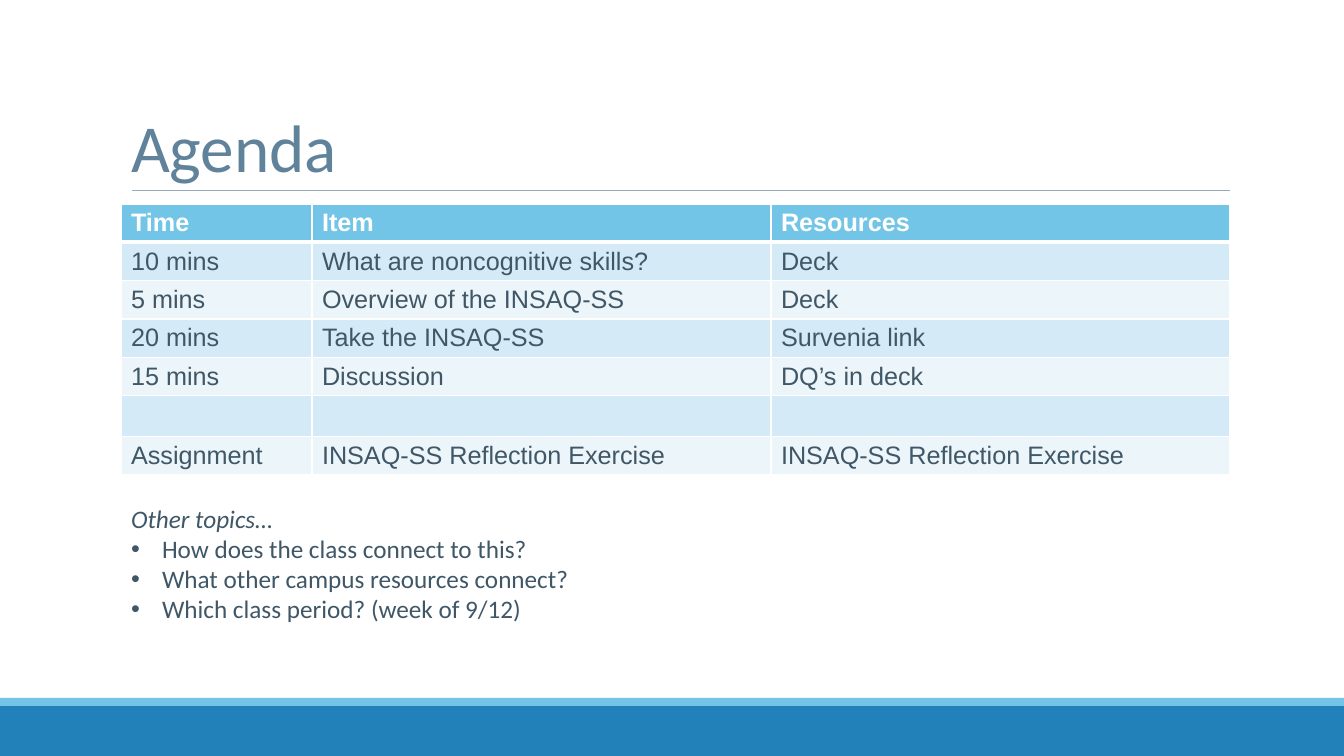
from lxml.etree import SubElement
from pptx import Presentation
from pptx.dml.color import RGBColor
from pptx.enum.shapes import MSO_CONNECTOR, MSO_SHAPE
from pptx.enum.text import MSO_ANCHOR, MSO_AUTO_SIZE, PP_ALIGN
from pptx.oxml.ns import qn
from pptx.util import Emu, Pt

EMU_PER_PX = 914400 / 100.8
SLIDE_W, SLIDE_H = 1344, 756
LEFT, CONTENT_W = 121, 1109

WHITE = RGBColor(0xFF, 0xFF, 0xFF)
BLUE = RGBColor(0x22, 0x81, 0xB8)
SKY = RGBColor(0x72, 0xC5, 0xE7)
RULE_GREY = RGBColor(0x95, 0xAC, 0xBC)
TITLE_BLUE = RGBColor(0x60, 0x83, 0x9B)
INK = RGBColor(0x40, 0x57, 0x67)
BAND_DARK = RGBColor(0xD4, 0xEA, 0xF6)
BAND_LIGHT = RGBColor(0xEB, 0xF5, 0xFA)

COLUMN_WIDTHS = (191, 459, 459)
ROW_H = 38
AGENDA = [
    ("Time", "Item", "Resources"),
    ("10 mins", "What are noncognitive skills?", "Deck"),
    ("5 mins", "Overview of the INSAQ-SS", "Deck"),
    ("20 mins", "Take the INSAQ-SS", "Survenia link"),
    ("15 mins", "Discussion", "DQ’s in deck"),
    ("", "", ""),
    ("Assignment", "INSAQ-SS Reflection Exercise", "INSAQ-SS Reflection Exercise"),
]
TOPICS = [
    "How does the class connect to this?",
    "What other campus resources connect?",
    "Which class period? (week of 9/12)",
]


def px(length):
    return Emu(round(length * EMU_PER_PX))


def place(shape, left, top, width, height):
    shape.left, shape.top = px(left), px(top)
    shape.width, shape.height = px(width), px(height)


def add_run(paragraph, text, size, font_name, color, bold=False, italic=False):
    run = paragraph.add_run()
    run.text = text
    font = run.font
    font.size, font.name = Pt(size), font_name
    font.bold, font.italic = bold, italic
    font.color.rgb = color


def add_band(slide, top, height, color):
    band = slide.shapes.add_shape(
        MSO_SHAPE.RECTANGLE, 0, px(top), px(SLIDE_W), px(height))
    band.shadow.inherit = False
    band.fill.solid()
    band.fill.fore_color.rgb = color
    band.line.fill.background()


def add_title_rule(slide):
    rule = slide.shapes.add_connector(
        MSO_CONNECTOR.STRAIGHT, px(132), px(191), px(1230), px(191))
    rule.line.color.rgb = RULE_GREY
    rule.line.width = Pt(0.75)
    SubElement(rule.element.spPr, qn("a:effectLst"))


def fill_title(title):
    place(title, LEFT, 31, CONTENT_W, 160)
    frame = title.text_frame
    frame.auto_size = MSO_AUTO_SIZE.NONE
    frame.vertical_anchor = MSO_ANCHOR.BOTTOM
    heading = frame.paragraphs[0]
    heading.alignment = PP_ALIGN.LEFT
    heading.line_spacing = 0.85
    add_run(heading, "Agenda", 48, "Calibri", TITLE_BLUE)


def set_borders(cell, **widths):
    """Draw white borders; the widths in points are keyed L, R, T and B."""
    properties = cell._tc.get_or_add_tcPr()
    for side, width in widths.items():
        border = SubElement(properties, qn(f"a:ln{side}"), w=str(Pt(width)))
        fill = SubElement(border, qn("a:solidFill"))
        SubElement(fill, qn("a:srgbClr"), val=str(WHITE))


def fill_cell(cell, text, row):
    is_header = row == 0
    set_borders(cell, L=1, R=1, T=3 if row == 1 else 1, B=3 if is_header else 1)
    cell.fill.solid()
    band = BAND_DARK if row % 2 else BAND_LIGHT
    cell.fill.fore_color.rgb = SKY if is_header else band
    cell.vertical_anchor = MSO_ANCHOR.MIDDLE
    if text:
        add_run(cell.text_frame.paragraphs[0], text, 18, "Arial",
                WHITE if is_header else INK, bold=is_header)


def add_agenda(slide):
    table = slide.shapes.add_table(
        len(AGENDA), len(COLUMN_WIDTHS), px(LEFT), px(204),
        px(CONTENT_W), px(ROW_H * len(AGENDA))).table
    for column, width in zip(table.columns, COLUMN_WIDTHS):
        column.width = px(width)
    for row, texts in enumerate(AGENDA):
        table.rows[row].height = px(ROW_H)
        for column, text in enumerate(texts):
            fill_cell(table.cell(row, column), text, row)


def set_bullet(paragraph, bulleted):
    properties = paragraph._p.get_or_add_pPr()
    indent = px(31) if bulleted else 0
    properties.set("marL", str(indent))
    properties.set("indent", str(-indent))
    if bulleted:
        color = SubElement(properties, qn("a:buClr"))
        SubElement(color, qn("a:srgbClr"), val=str(INK))
        SubElement(properties, qn("a:buFont"), typeface="Arial")
        SubElement(properties, qn("a:buChar"), char="•")
    else:
        SubElement(properties, qn("a:buNone"))


def fill_topics(body):
    place(body, LEFT, 498, CONTENT_W, 132)
    frame = body.text_frame
    frame.auto_size = MSO_AUTO_SIZE.NONE
    frame.vertical_anchor = MSO_ANCHOR.TOP
    for index, text in enumerate(["Other topics…", *TOPICS]):
        is_intro = index == 0
        topic = frame.paragraphs[0] if is_intro else frame.add_paragraph()
        set_bullet(topic, not is_intro)
        topic.space_before = Pt(0)
        add_run(topic, text, 18, "Calibri", INK, italic=is_intro)


def main():
    deck = Presentation()
    deck.slide_width, deck.slide_height = px(SLIDE_W), px(SLIDE_H)
    slide = deck.slides.add_slide(deck.slide_layouts[1])
    add_band(slide, 706, 50, BLUE)
    add_band(slide, 698, 8, SKY)
    add_title_rule(slide)
    fill_title(slide.shapes.title)
    add_agenda(slide)
    fill_topics(slide.placeholders[1])
    deck.save("out.pptx")


if __name__ == "__main__":
    main()
